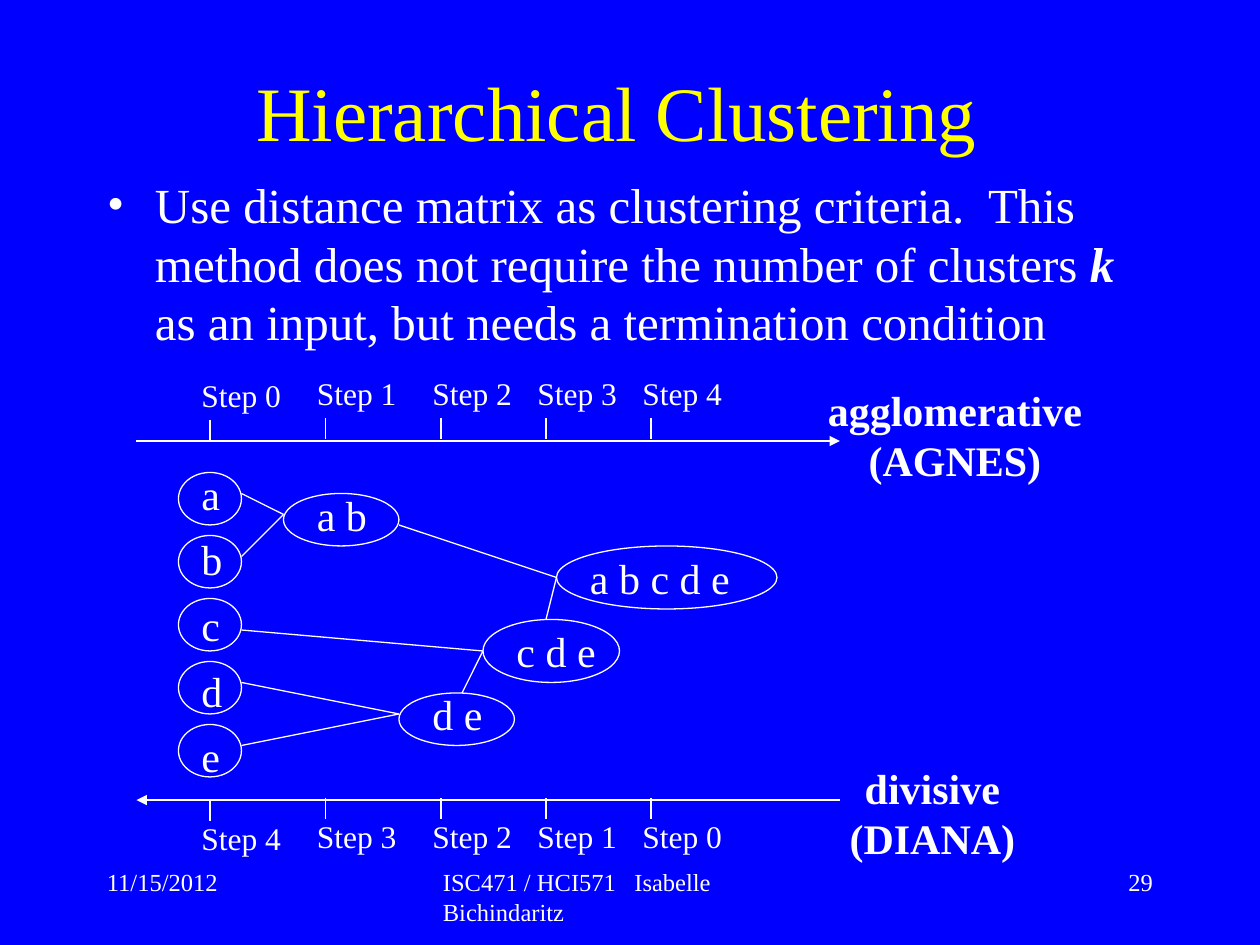
from lxml.etree import SubElement
from pptx import Presentation
from pptx.dml.color import RGBColor
from pptx.enum.shapes import MSO_CONNECTOR, MSO_SHAPE
from pptx.enum.text import MSO_ANCHOR, MSO_AUTO_SIZE, PP_ALIGN
from pptx.oxml.ns import qn
from pptx.util import Inches, Pt

COLORS = {"background": "0000FF", "title": "FFFF00", "ink": "FFFFFF"}
FONT = "Times New Roman"

deck = Presentation()
deck.slide_width, deck.slide_height = Inches(10), Inches(7.5)
slide = deck.slides.add_slide(deck.slide_layouts[1])
slide.background.fill.solid()
slide.background.fill.fore_color.rgb = RGBColor.from_string(COLORS["background"])

# The slide is a grid of 120 columns by 90 rows.
CELL = deck.slide_width / 120


def write(holder, box, lines, size, color="ink", align=PP_ALIGN.LEFT, wrap=True):
    """Place holder at box (grid cells) and fill it; a line is a list of (text, bold, italic)."""
    holder.left, holder.top, holder.width, holder.height = (round(n * CELL) for n in box)
    frame = holder.text_frame
    frame.word_wrap = wrap
    frame.auto_size = MSO_AUTO_SIZE.NONE
    for number, line in enumerate(lines):
        paragraph = frame.add_paragraph() if number else frame.paragraphs[0]
        paragraph.alignment = align
        for words, bold, italic in line:
            run = paragraph.add_run()
            run.text = words
            run.font.name, run.font.size = FONT, Pt(size)
            run.font.bold, run.font.italic = bold, italic
            run.font.color.rgb = RGBColor.from_string(COLORS[color])


def draw_line(x1, y1, x2, y2, width=0.75, arrow_end=None):
    """Draw a line between grid points; arrow_end is headEnd (start) or tailEnd (finish)."""
    line = slide.shapes.add_connector(
        MSO_CONNECTOR.STRAIGHT, *(round(n * CELL) for n in (x1, y1, x2, y2)))
    line.line.color.rgb = RGBColor.from_string(COLORS["ink"])
    line.line.width = Pt(width)
    if arrow_end:
        SubElement(line.line._get_or_add_ln(), qn("a:" + arrow_end), type="triangle")
    SubElement(line._element.spPr, qn("a:effectLst"))


# Title and body
heading = slide.shapes.title
write(heading, (11, 5, 95.5, 11), [[("Hierarchical Clustering", False, False)]],
      44, "title", PP_ALIGN.CENTER)
heading.text_frame.vertical_anchor = MSO_ANCHOR.MIDDLE

summary = slide.placeholders[1]
write(summary, (9, 16, 101, 51.6), [[
    ("Use distance matrix as clustering criteria.  This method does not require "
     "the number of clusters ", False, False),
    ("k", True, True),
    (" as an input, but needs a termination condition", False, False)]], 28)
summary.text_frame.vertical_anchor = MSO_ANCHOR.TOP
bullet_format = summary.text_frame.paragraphs[0]._p.get_or_add_pPr()
bullet_format.set("marL", str(Inches(0.38)))
bullet_format.set("indent", str(-Inches(0.38)))
bullet_color = SubElement(bullet_format, qn("a:buClr"))
SubElement(bullet_color, qn("a:srgbClr"), val=COLORS["ink"])
SubElement(bullet_format, qn("a:buFont"), typeface=FONT)
SubElement(bullet_format, qn("a:buChar"), char="•")

# Footer
for column, width, words, align in (
        (9, 25, "11/15/2012", PP_ALIGN.LEFT),
        (41, 38, "ISC471 / HCI571   Isabelle Bichindaritz", PP_ALIGN.LEFT),
        (86, 25, "29", PP_ALIGN.RIGHT)):
    write(slide.shapes.add_textbox(0, 0, 0, 0), (column, 82, width, 6),
          [[(words, False, False)]], 14, align=align)

# Step axes: agglomerative runs right, divisive runs left
draw_line(13, 42, 80, 42, 1.5, "tailEnd")
draw_line(13, 76.2, 80, 76.2, 1.5, "headEnd")
for step, column in enumerate((20, 31, 42, 52, 62)):
    drop = 0 if step else 0.2  # the first step sits slightly lower
    for tick_row, label_row, number in ((39.8, 35, step), (76, 77.2, 4 - step)):
        draw_line(column, tick_row + drop, column, tick_row + drop + 2)
        write(slide.shapes.add_textbox(0, 0, 0, 0), (column - 2, label_row + drop, 10, 4.8),
              [[(f"Step {number}", False, False)]], 18, wrap=False)

# Clusters: members, ellipse box, label box
clusters = [(name, (17, 45 + 6 * i, 6, 5), (18, 44 + 6.25 * i, 4.3, 6))
            for i, name in enumerate("abcde")]
clusters += [
    ("a b", (27, 47, 11, 5), (29, 46, 7.2, 6)),
    ("d e", (38, 66, 11, 5), (40, 65, 7.2, 6)),
    ("c d e", (46, 59, 13, 6), (48, 59, 10, 6)),
    ("a b c d e", (53, 52, 21, 6), (55, 52, 15.7, 6)),
]
for members, outline, label in clusters:
    ellipse = slide.shapes.add_shape(MSO_SHAPE.OVAL, *(round(n * CELL) for n in outline))
    ellipse.shadow.inherit = False
    ellipse.fill.background()
    ellipse.line.color.rgb = RGBColor.from_string(COLORS["ink"])
    ellipse.line.width = Pt(0.75)
    write(slide.shapes.add_textbox(0, 0, 0, 0), label,
          [[(members, False, False)]], 24, wrap=False)

# Merges between clusters
for merge in ((23, 47, 27, 49), (23, 53, 27, 49),
              (23, 65, 38, 68), (23, 71, 38, 68),
              (23, 60, 46, 62), (44, 66, 46, 62),
              (38, 50, 53, 55), (52, 59, 53, 55)):
    draw_line(*merge)

# Method names
for box, method, program in (
        ((77.6, 36, 26.7, 10.8), "agglomerative", "(AGNES)"),
        ((79.7, 72, 18.2, 10.8), "divisive", "(DIANA)")):
    write(slide.shapes.add_textbox(0, 0, 0, 0), box,
          [[(method, True, False)], [(program, True, False)]],
          24, align=PP_ALIGN.CENTER, wrap=False)

deck.save("out.pptx")
